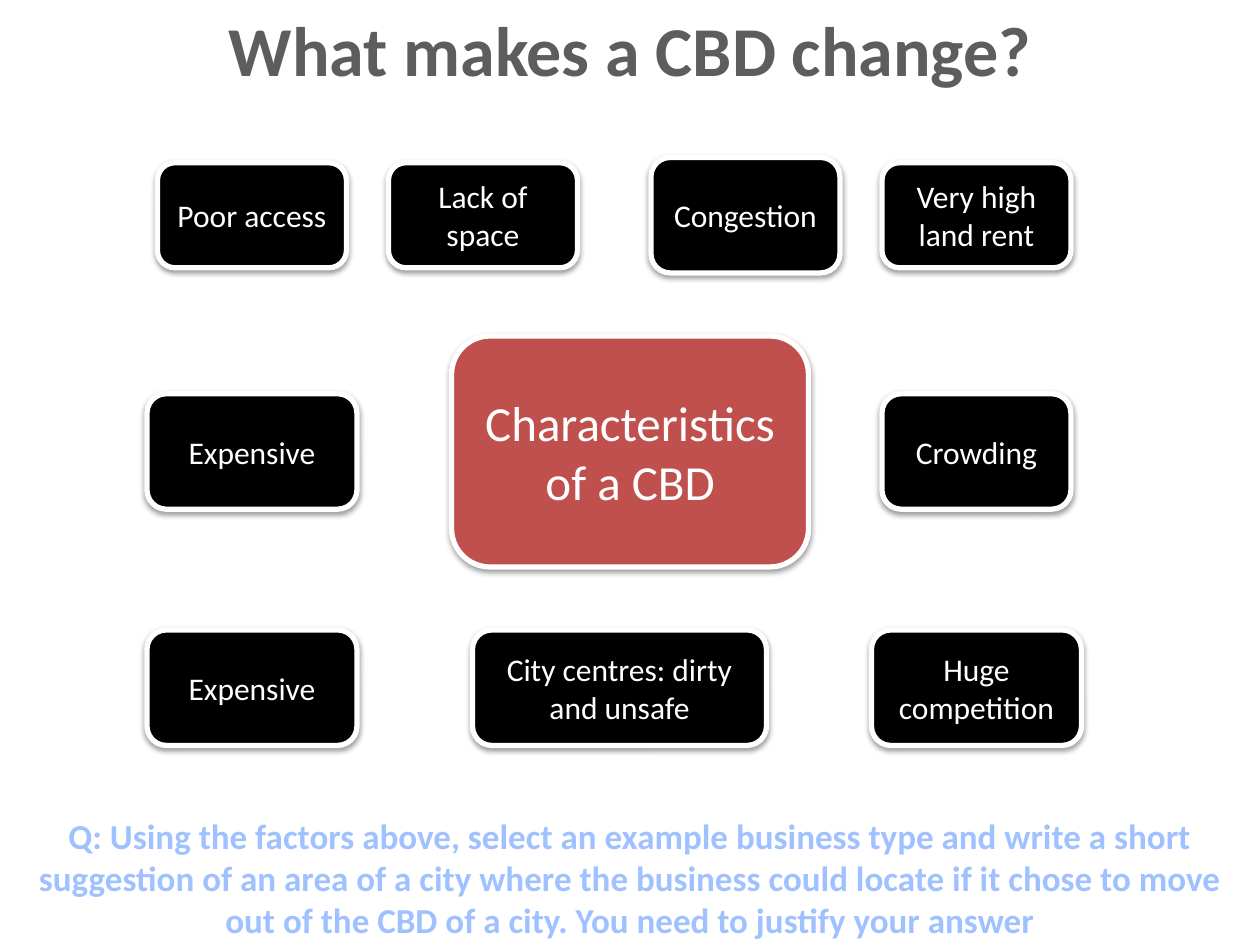
"""Build the slide on what makes a CBD change."""
import pptx
import pptx.util
import pptx.dml.color
import pptx.enum.shapes
import pptx.enum.text
import pptx.oxml
import pptx.oxml.ns

RGBColor = pptx.dml.color.RGBColor
WHITE = RGBColor(0xFF, 0xFF, 0xFF)
BLACK = RGBColor(0x00, 0x00, 0x00)
RED = RGBColor(0xC0, 0x50, 0x4D)
GREY = RGBColor(0x5D, 0x5D, 0x5D)
BLUE = RGBColor(0xA0, 0xC1, 0xFF)

SHADOW = (
    f'<a:effectLst {pptx.oxml.ns.nsdecls("a")}>'
    '<a:outerShdw blurRad="40000" dist="20000" dir="5400000" rotWithShape="0">'
    '<a:srgbClr val="000000"><a:alpha val="38000"/></a:srgbClr>'
    '</a:outerShdw></a:effectLst>'
)

prs = pptx.Presentation()
prs.slide_width = pptx.util.Inches(10)
prs.slide_height = pptx.util.Inches(7.5)
W, H = prs.slide_width, prs.slide_height
UNIT = W // 120
s = prs.slides.add_slide(prs.slide_layouts[5])


def write(sp, text, size, color, bold=False):
    tf = sp.text_frame
    tf.text = text
    tf.word_wrap = True
    tf.auto_size = pptx.enum.text.MSO_AUTO_SIZE.NONE
    p = tf.paragraphs[0]
    p.alignment = pptx.enum.text.PP_ALIGN.CENTER
    font = p.runs[0].font
    font.name = "Calibri"
    font.size = pptx.util.Pt(size)
    font.bold = bold
    font.color.rgb = color


title = s.shapes.title
title.left, title.top, title.width, title.height = 0, 0, W, int(H * 0.103)
write(title, "What makes a CBD change?", 40, GREY, True)
title.text_frame.vertical_anchor = pptx.enum.text.MSO_ANCHOR.TOP

LEFT, MIDDLE, RIGHT = 24, 60, 93
TOP_ROW, MID_ROW, LOW_ROW = 20.5, 43, 65.5
boxes = [
    ("Characteristics of a CBD", MIDDLE, MID_ROW, 34, 22, RED, 28),
    ("Very high land rent", RIGHT, TOP_ROW, 18, 10, BLACK, 18),
    ("Crowding", RIGHT, MID_ROW, 18, 11, BLACK, 18),
    ("Huge competition", RIGHT, LOW_ROW, 20, 11, BLACK, 18),
    ("City centres: dirty and unsafe", 59, LOW_ROW, 28, 11, BLACK, 18),
    ("Expensive", LEFT, LOW_ROW, 20, 11, BLACK, 18),
    ("Expensive", LEFT, MID_ROW, 20, 11, BLACK, 18),
    ("Congestion", 71, TOP_ROW, 18, 11, BLACK, 18),
    ("Lack of space", 46, TOP_ROW, 18, 10, BLACK, 18),
    ("Poor access", LEFT, TOP_ROW, 18, 10, BLACK, 18),
]
for text, col, row, cols, rows, fill, size in boxes:
    sp = s.shapes.add_shape(
        pptx.enum.shapes.MSO_SHAPE.ROUNDED_RECTANGLE,
        int((col - cols / 2) * UNIT), int((row - rows / 2) * UNIT),
        cols * UNIT, rows * UNIT)
    sp.fill.solid()
    sp.fill.fore_color.rgb = fill
    sp.line.color.rgb = WHITE
    sp.line.width = pptx.util.Pt(3)
    sp._element.spPr.append(pptx.oxml.parse_xml(SHADOW))
    write(sp, text, size, WHITE)
    sp.text_frame.vertical_anchor = pptx.enum.text.MSO_ANCHOR.MIDDLE

question = s.shapes.add_textbox(0, 77 * UNIT, W, int(H * 0.148))
write(question, "Q: Using the factors above, select an example business type and "
      "write a short suggestion of an area of a city where the business could "
      "locate if it chose to move out of the CBD of a city. You need to justify "
      "your answer", 20, BLUE, True)

prs.save("out.pptx")
